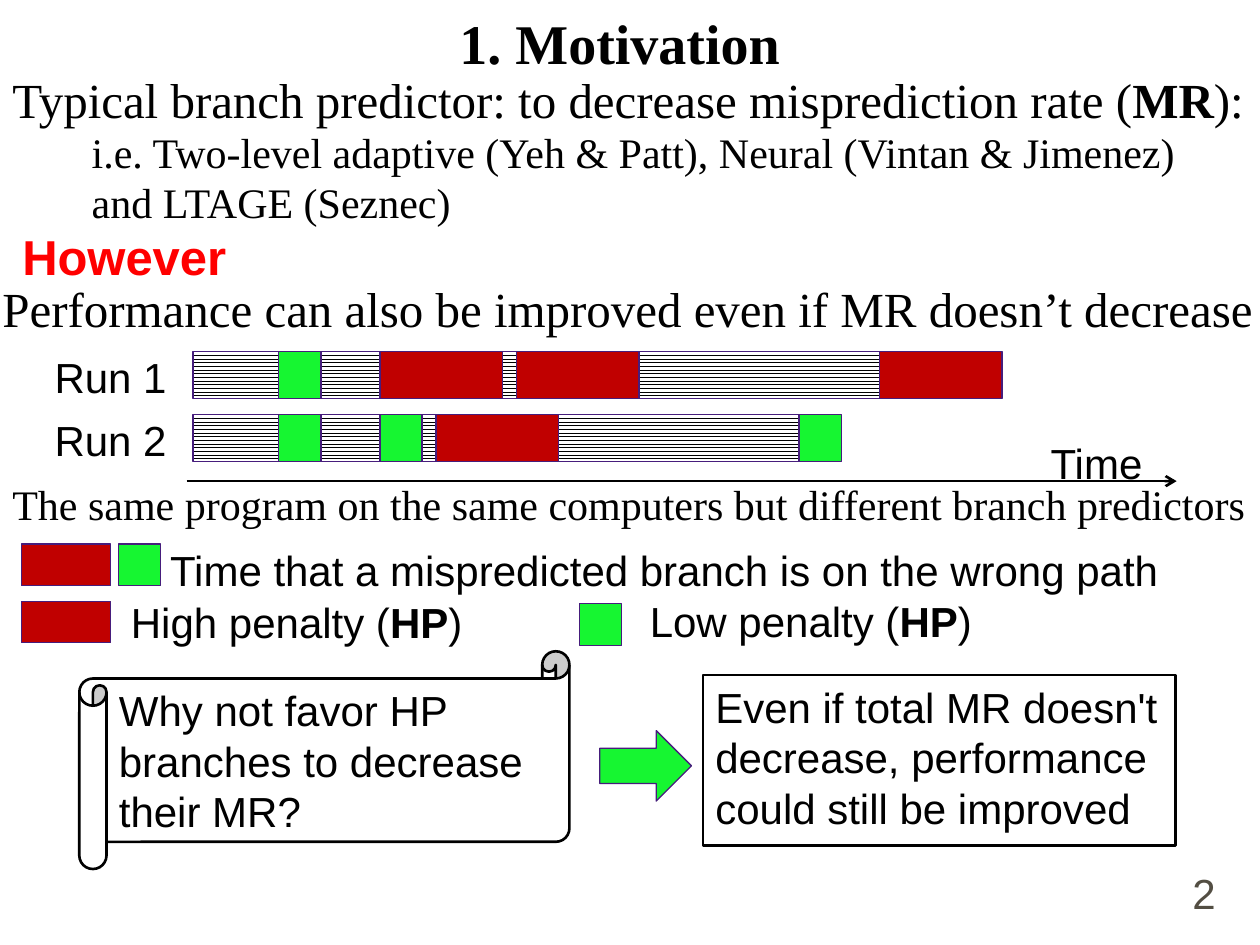
from lxml import etree
from pptx import Presentation
from pptx.dml.color import RGBColor
from pptx.enum.dml import MSO_PATTERN
from pptx.enum.shapes import MSO_CONNECTOR, MSO_SHAPE
from pptx.enum.text import MSO_ANCHOR, PP_ALIGN
from pptx.oxml.ns import qn
from pptx.util import Cm, Pt

RECT, SCROLL, ARROW = MSO_SHAPE.RECTANGLE, MSO_SHAPE.HORIZONTAL_SCROLL, MSO_SHAPE.RIGHT_ARROW
STRAIGHT, ZIG_ZAG = MSO_CONNECTOR.STRAIGHT, MSO_PATTERN.ZIG_ZAG
LEFT, CENTER, RIGHT = PP_ALIGN.LEFT, PP_ALIGN.CENTER, PP_ALIGN.RIGHT
TOP, MIDDLE, BOTTOM = MSO_ANCHOR.TOP, MSO_ANCHOR.MIDDLE, MSO_ANCHOR.BOTTOM

SERIF, SANS = "Times New Roman", "Arial"
COLORS = {
    "black": "000000", "white": "FFFFFF", "however": "FF0000", "number": "534E43",
    "high": "C00000", "low": "16F631", "outline": "461D7C",
}
# Segment widths in cm
HIGH, LOW = 2.47, 0.85
RUNS = {
    "Run 1": [("work", 1.73), ("low", LOW), ("work", 1.19), ("high", HIGH),
              ("work", 0.28), ("high", HIGH), ("work", 4.85), ("high", HIGH)],
    "Run 2": [("work", 1.73), ("low", LOW), ("work", 1.19), ("low", LOW),
              ("work", 0.28), ("high", HIGH), ("work", 4.85), ("low", LOW)],
}


def color(name):
    return RGBColor.from_string(COLORS[name])


def write(shape, text, font=SANS, size=24, fill="black", bold=False, align=LEFT, anchor=TOP):
    """Put text in a shape; parts between asterisks are bold."""
    frame = shape.text_frame
    frame.word_wrap = True
    frame.vertical_anchor = anchor
    paragraph = frame.paragraphs[0]
    paragraph.alignment = align
    for index, part in enumerate(text.split("*")):
        run = paragraph.add_run()
        run.text = part
        run.font.name, run.font.size = font, Pt(size)
        run.font.bold = bold or index % 2 == 1
        run.font.color.rgb = color(fill)


def add_text(slide, box, text, **style):
    write(slide.shapes.add_textbox(*map(Cm, box)), text, **style)


def add_block(slide, box, fill=None, kind=RECT, line="outline", weight=0.75):
    block = slide.shapes.add_shape(kind, *map(Cm, box))
    block.shadow.inherit = False
    if fill == "work":
        block.fill.patterned()
        block.fill.pattern = ZIG_ZAG
        block.fill.fore_color.rgb = color("black")
        block.fill.back_color.rgb = color("white")
    elif fill:
        block.fill.solid()
        block.fill.fore_color.rgb = color(fill)
    else:
        block.fill.background()
    block.line.color.rgb = color(line)
    block.line.width = Pt(weight)
    return block


def add_time_axis(slide, left, y, length):
    axis = slide.shapes.add_connector(STRAIGHT, Cm(left), Cm(y), Cm(left + length), Cm(y))
    axis.line.color.rgb = color("black")
    axis.line.width = Pt(1.5)
    etree.SubElement(axis.line._get_or_add_ln(), qn("a:tailEnd"), type="arrow")
    etree.SubElement(axis._element.spPr, qn("a:effectLst"))


def add_heading(slide, left, top, width, height):
    title = slide.shapes.title
    title.left, title.top, title.width, title.height = map(Cm, (left, top, width, height))
    write(title, "1. Motivation", font=SERIF, size=32, bold=True, align=CENTER, anchor=MIDDLE)


def add_argument(slide, left, top, width):
    add_text(slide, (left, top, width + 1.27, 1.45),
             "Typical branch predictor: to decrease misprediction rate (*MR*):", font=SERIF, size=28)
    add_text(slide, (left + 1.6, top + 1.15, 22.58, 2.31),
             "i.e. Two-level adaptive (Yeh & Patt), Neural (Vintan & Jimenez) and LTAGE (Seznec)",
             font=SERIF)
    add_text(slide, (left + 0.2, top + 3.17, 4.83, 1.45), "However",
             size=28, fill="however", bold=True)
    add_text(slide, (left - 0.2, top + 4.23, width + 0.43, 1.45),
             "Performance can also be improved even if MR doesn’t decrease", font=SERIF, size=28)


def add_timeline(slide, left, top, width):
    """Two runs as rows of segments above a time axis, with a caption below."""
    for row, (label, segments) in enumerate(RUNS.items()):
        y = top + row * 1.27
        add_text(slide, (left + 0.85, y - 0.13, 2.84, 1.27), label)
        x = left + 3.89
        for kind, length in segments:
            add_block(slide, (x, y, length, 0.94), kind)
            x += length
    add_time_axis(slide, left + 3.76, top + 2.61, 19.96)
    add_text(slide, (left + 20.93, top + 1.6, 2.59, 1.27), "Time")
    add_text(slide, (left, top + 2.44, width + 0.43, 1.27),
             "The same program on the same computers but different branch predictors", font=SERIF)


def add_legend(slide, left, top):
    swatches = [("high", 0, 0, 1.8), ("low", 1.96, 0, LOW),
                ("high", 0, 1.15, 1.8), ("low", 11.25, 1.2, LOW)]
    for kind, x, y, width in swatches:
        add_block(slide, (left + x, top + y, width, 0.84), kind)
    labels = [("Time that a mispredicted branch is on the wrong path", 2.75, -0.12, 21.41),
              ("High penalty (*HP*)", 1.96, 0.94, 7.57),
              ("Low penalty (*HP*)", 12.42, 0.92, 7.57)]
    for text, x, y, width in labels:
        add_text(slide, (left + x, top + y, width, 1.27), text)


def add_conclusion(slide, left, top):
    question = add_block(slide, (left, top, 9.88, 4.39), "white", SCROLL, "black", 1.5)
    write(question, "Why not favor HP branches to decrease their MR?")
    add_block(slide, (left + 10.49, top + 1.6, 1.85, 1.42), "low", ARROW)
    answer = add_block(slide, (left + 12.57, top + 0.48, 9.53, 3.43), line="black", weight=1.5)
    write(answer, "Even if total MR doesn't decrease, performance could still be improved")


def main():
    deck = Presentation()
    deck.slide_width, deck.slide_height = Cm(25.4), Cm(19.05)
    slide = deck.slides.add_slide(deck.slide_layouts[5])
    add_heading(slide, 1.7, 0, 21.59, 1.7)
    add_argument(slide, 0, 1.27, 25.4)
    add_timeline(slide, 0, 7.09, 25.4)
    add_legend(slide, 0.43, 10.97)
    add_conclusion(slide, 1.6, 13.13)
    add_text(slide, (22.02, 17.35, 2.74, 1.27), "2", fill="number", align=RIGHT, anchor=BOTTOM)
    deck.save("out.pptx")


if __name__ == "__main__":
    main()
